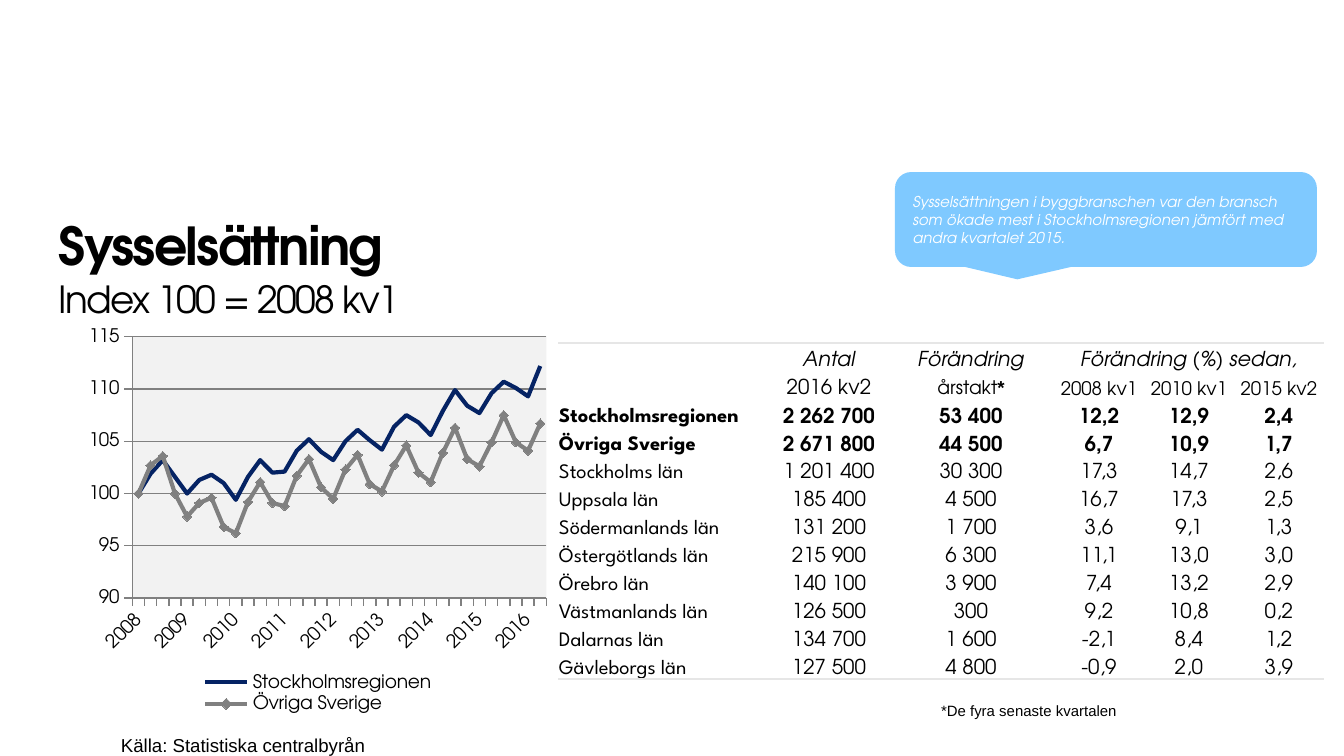
import pptx
import pptx.chart.data
import pptx.dml.color
import pptx.enum.chart
import pptx.enum.shapes
import pptx.enum.text
import pptx.oxml
import pptx.oxml.ns
import pptx.util

EMU_PER_PX = 914400 / 134.4
BODY_FONT = "TeX Gyre Adventor"
LABEL_FONT = "League Spartan"
NOTE_FONT = "Arial"
PLAIN_TABLE_STYLE = "{2D5ABB26-0587-4C30-8999-92F81FD0307C}"
BLACK, WHITE, GREY, NAVY = "000000", "FFFFFF", "808080", "052364"
PALE_GREY, RULE_GREY, SKY = "F2F2F2", "E6E6E6", "7FC9FF"
CENTER = pptx.enum.text.PP_ALIGN.CENTER
LEFT = pptx.enum.text.PP_ALIGN.LEFT

YEARS = range(2008, 2017)
REGION_INDEX = [
    100, 101.9, 103.2, 101.6, 100, 101.3, 101.8, 101, 99.4, 101.6, 103.2, 102,
    102.1, 104.1, 105.2, 104, 103.2, 105, 106.1, 105.1, 104.2, 106.4, 107.5,
    106.8, 105.6, 107.9, 109.9, 108.4, 107.7, 109.6, 110.7, 110.1, 109.3, 112.2]
REST_INDEX = [
    100, 102.7, 103.6, 100, 97.8, 99.1, 99.6, 96.8, 96.2, 99.2, 101.1, 99.1,
    98.8, 101.7, 103.3, 100.6, 99.5, 102.3, 103.7, 100.9, 100.2, 102.7, 104.6,
    102, 101.1, 103.9, 106.3, 103.3, 102.6, 104.9, 107.5, 104.9, 104.1, 106.7]

HEADINGS = [
    ["", "Antal", "Förändring", "Förändring (%) sedan,", "", ""],
    ["", "2016 kv2", "årstakt*", "2008 kv1", "2010 kv1", "2015 kv2"]]
EMPLOYMENT = [
    ["Stockholmsregionen", "2 262 700", "53 400", "12,2", "12,9", "2,4"],
    ["Övriga Sverige", "2 671 800", "44 500", "6,7", "10,9", "1,7"],
    ["Stockholms län", "1 201 400", "30 300", "17,3", "14,7", "2,6"],
    ["Uppsala län", "185 400", "4 500", "16,7", "17,3", "2,5"],
    ["Södermanlands län", "131 200", "1 700", "3,6", "9,1", "1,3"],
    ["Östergötlands län", "215 900", "6 300", "11,1", "13,0", "3,0"],
    ["Örebro län", "140 100", "3 900", "7,4", "13,2", "2,9"],
    ["Västmanlands län", "126 500", "300", "9,2", "10,8", "0,2"],
    ["Dalarnas län", "134 700", "1 600", "-2,1", "8,4", "1,2"],
    ["Gävleborgs län", "127 500", "4 800", "-0,9", "2,0", "3,9"]]


def px(length):
    return pptx.util.Emu(round(length * EMU_PER_PX))


def box(*lengths):
    return [px(length) for length in lengths]


def color(value):
    return pptx.dml.color.RGBColor.from_string(value)


def apply(target, **values):
    for name, value in values.items():
        setattr(target, name, value)


def format_font(font, size, value=BLACK, name=BODY_FONT, bold=False, italic=False):
    apply(font, size=pptx.util.Pt(size), name=name, bold=bold, italic=italic)
    font.color.rgb = color(value)


def format_line(line, value, width):
    line.color.rgb = color(value)
    line.width = pptx.util.Pt(width)


def place_layout(element, left, top, width, height, inner=False):
    """Give a plot area or legend a fixed place, as fractions of the chart."""
    target = '<c:layoutTarget val="inner"/>' if inner else ""
    values = "".join(f'<c:{name} val="{value}"/>' for name, value in (
        ("xMode", "edge"), ("yMode", "edge"),
        ("x", left), ("y", top), ("w", width), ("h", height)))
    layout = pptx.oxml.parse_xml(
        f'<c:layout {pptx.oxml.ns.nsdecls("c")}><c:manualLayout>'
        f'{target}{values}</c:manualLayout></c:layout>')
    for former in element.findall(pptx.oxml.ns.qn("c:layout")):
        element.remove(former)
    if inner:
        element.insert(0, layout)
    else:
        element.find(pptx.oxml.ns.qn("c:legendPos")).addnext(layout)


class SlideBuilder:
    def __init__(self, presentation):
        self.slide = presentation.slides.add_slide(presentation.slide_layouts[5])

    def title(self, heading, subtitle, left, top, width, height):
        shape = self.slide.shapes.title
        apply(shape, left=px(left), top=px(top), width=px(width), height=px(height))
        frame = shape.text_frame
        apply(frame, margin_left=0, margin_top=0, margin_right=0, margin_bottom=0,
              word_wrap=True, auto_size=pptx.enum.text.MSO_AUTO_SIZE.NONE,
              vertical_anchor=pptx.enum.text.MSO_ANCHOR.BOTTOM)
        paragraph = frame.paragraphs[0]
        paragraph.alignment = LEFT
        for text, size, bold in ((heading, 28, True), (subtitle, 20, False)):
            if paragraph.runs:
                paragraph.add_line_break()
            run = paragraph.add_run()
            run.text = text
            format_font(run.font, size, bold=bold)
            run.font._element.set("spc", "-90")

    def note(self, text, size, *place):
        frame = self.slide.shapes.add_textbox(*box(*place)).text_frame
        apply(frame, margin_left=0, margin_top=0, margin_right=0, margin_bottom=0,
              word_wrap=True)
        paragraph = frame.paragraphs[0]
        paragraph.line_spacing = pptx.util.Pt(24)
        run = paragraph.add_run()
        run.text = text
        format_font(run.font, size, name=NOTE_FONT)

    def callout(self, text, *place):
        shape = self.slide.shapes.add_shape(
            pptx.enum.shapes.MSO_SHAPE.ROUNDED_RECTANGULAR_CALLOUT, *box(*place))
        shape.shadow.inherit = False
        shape.fill.solid()
        shape.fill.fore_color.rgb = color(SKY)
        shape.line.fill.background()
        for index, value in enumerate((-0.21, 0.63, 0.17)):
            shape.adjustments[index] = value
        apply(shape.text_frame, word_wrap=True,
              vertical_anchor=pptx.enum.text.MSO_ANCHOR.MIDDLE)
        paragraph = shape.text_frame.paragraphs[0]
        paragraph.alignment = LEFT
        run = paragraph.add_run()
        run.text = text
        format_font(run.font, 8, WHITE, italic=True)

    def cell(self, cell, text, alignment, size, edge=None, **font_values):
        """Fill one cell; edge is the tag of a ruled side, lnT or lnB."""
        apply(cell, margin_left=px(1), margin_top=px(1), margin_right=px(1),
              margin_bottom=0, vertical_anchor=pptx.enum.text.MSO_ANCHOR.BOTTOM)
        cell.fill.background()
        if edge:
            cell._tc.get_or_add_tcPr().insert(0, pptx.oxml.parse_xml(
                f'<a:{edge} {pptx.oxml.ns.nsdecls("a")} w="12700"><a:solidFill>'
                f'<a:srgbClr val="{RULE_GREY}"/></a:solidFill></a:{edge}>'))
        paragraph = cell.text_frame.paragraphs[0]
        paragraph.alignment = alignment
        if not text:
            paragraph._p.get_or_add_endParaRPr().set("sz", str(size * 100))
        words = text.rstrip("*")
        star_values = {"name": NOTE_FONT, "bold": True}
        for part, values in ((words, font_values), (text[len(words):], star_values)):
            if part:
                run = paragraph.add_run()
                run.text = part
                format_font(run.font, size, **values)

    def table(self, rows, column_widths, row_height, left, top):
        table = self.slide.shapes.add_table(
            len(rows), len(column_widths),
            *box(left, top, sum(column_widths), row_height * len(rows))).table
        apply(table, first_row=False, horz_banding=False)
        table._tbl.tblPr.find(
            pptx.oxml.ns.qn("a:tableStyleId")).text = PLAIN_TABLE_STYLE
        for column, width in zip(table.columns, column_widths):
            column.width = px(width)
        last = len(rows) - 1
        for r, row in enumerate(rows):
            table.rows[r].height = px(row_height)
            for c, text in enumerate(row):
                self.cell(table.cell(r, c), text, CENTER if c else LEFT,
                          10 if r == 1 and c > 1 else 11,
                          edge={0: "lnT", last: "lnB"}.get(r),
                          name=BODY_FONT if c else LABEL_FONT,
                          bold=r in (2, 3), italic=r == 0)
        table.cell(0, 3).merge(table.cell(0, 5))

    def line_chart(self, categories, series_values, *place):
        data = pptx.chart.data.CategoryChartData()
        data.categories = categories
        for name, values in series_values.items():
            data.add_series(name, values)
        chart = self.slide.shapes.add_chart(
            pptx.enum.chart.XL_CHART_TYPE.LINE_MARKERS, *box(*place), data).chart
        apply(chart, has_title=False, has_legend=True)
        format_font(chart.font, 10)
        apply(chart.legend, include_in_layout=False,
              position=pptx.enum.chart.XL_LEGEND_POSITION.BOTTOM)
        format_font(chart.legend.font, 10)
        plot_area = chart._chartSpace.chart.plotArea
        place_layout(plot_area, 0.11, 0.04, 0.87, 0.66, inner=True)
        place_layout(chart.legend._element, 0.25, 0.88, 0.5, 0.12)
        plot_area.append(pptx.oxml.parse_xml(
            f'<c:spPr {pptx.oxml.ns.nsdecls("c", "a")}><a:solidFill>'
            f'<a:srgbClr val="{PALE_GREY}"/></a:solidFill></c:spPr>'))
        self.axes(chart)
        chart.plots[0].vary_by_categories = False
        markers = pptx.enum.chart.XL_MARKER_STYLE
        for series, value, marker in zip(chart.plots[0].series, (NAVY, GREY),
                                         (markers.NONE, markers.DIAMOND)):
            series.smooth = False
            format_line(series.format.line, value, 2.25)
            apply(series.marker, style=marker, size=5)
            series.marker.format.fill.solid()
            series.marker.format.fill.fore_color.rgb = color(value)
            series.marker.format.line.color.rgb = color(value)

    def axes(self, chart):
        category_axis, value_axis = chart.category_axis, chart.value_axis
        for axis in (category_axis, value_axis):
            axis.major_tick_mark = pptx.enum.chart.XL_TICK_MARK.OUTSIDE
            format_font(axis.tick_labels.font, 10)
            format_line(axis.format.line, GREY, 0.75)
        apply(value_axis, minimum_scale=90, maximum_scale=115, major_unit=5,
              has_major_gridlines=True)
        apply(value_axis.tick_labels, number_format="#,##0",
              number_format_is_linked=False)
        format_line(value_axis.major_gridlines.format.line, GREY, 0.75)
        element = category_axis._element
        element.txPr.bodyPr.set("rot", "-2700000")
        element.find(pptx.oxml.ns.qn("c:noMultiLvlLbl")).addprevious(
            pptx.oxml.parse_xml(
                f'<c:tickLblSkip {pptx.oxml.ns.nsdecls("c")} val="1"/>'))


def main():
    presentation = pptx.Presentation()
    apply(presentation, slide_width=px(1344), slide_height=px(756))
    builder = SlideBuilder(presentation)
    builder.title("Sysselsättning", "Index 100 = 2008 kv1", 59, 214, 835, 107)
    builder.table(HEADINGS + EMPLOYMENT, [212, 118, 166, 90, 90, 90], 28, 558, 343)
    builder.note("Källa: Statistiska centralbyrån", 10, 121, 712, 260, 56)
    builder.note("*De fyra senaste kvartalen", 8, 941, 675, 190, 55)
    builder.callout(
        "Sysselsättningen i byggbranschen var den bransch som ökade mest i "
        "Stockholmsregionen jämfört med andra kvartalet 2015.", 895, 172, 422, 95)
    quarters = [str(year) if quarter == 0 else ""
                for year in YEARS for quarter in range(4)]
    builder.line_chart(
        quarters[:len(REGION_INDEX)],
        {"Stockholmsregionen": REGION_INDEX, "Övriga Sverige": REST_INDEX},
        80, 321, 476, 396)
    presentation.save("out.pptx")


if __name__ == "__main__":
    main()
